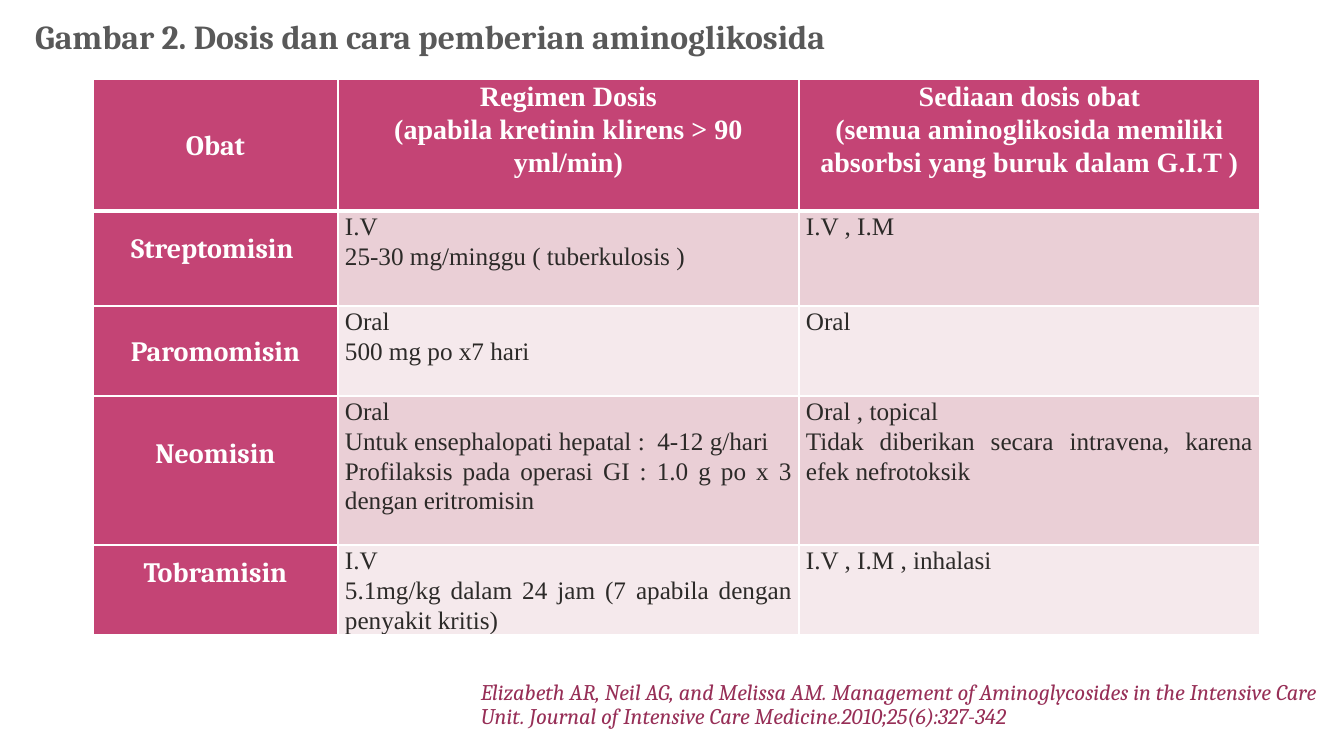
from lxml import etree
from pptx import Presentation
from pptx.dml.color import RGBColor
from pptx.enum.text import MSO_ANCHOR as ANCHOR, MSO_AUTO_SIZE as AUTO_SIZE, PP_ALIGN as ALIGN
from pptx.oxml.ns import qn
from pptx.util import Emu, Pt

SCALE = 914400 / 100.8
WHITE = RGBColor(0xFF, 0xFF, 0xFF)
GREY = RGBColor(0x59, 0x59, 0x59)
INK = RGBColor(0x2C, 0x2A, 0x28)
PINK = RGBColor(0xC4, 0x44, 0x75)
BANDS = [RGBColor(0xF5, 0xE9, 0xEC), RGBColor(0xEA, 0xCF, 0xD6)]
WINE = RGBColor(0x97, 0x2F, 0x57)
SERIF, TIMES = "Cambria", "Times New Roman"


def px(n):
    return Emu(round(n * SCALE))


def write(tf, lines, size, color, font=SERIF, bold=False, italic=False,
          align=ALIGN.LEFT, spacing=0.9, anchor=ANCHOR.TOP):
    tf.word_wrap = True
    tf.vertical_anchor = anchor
    for i, line in enumerate(lines):
        p = tf.paragraphs[0] if i == 0 else tf.add_paragraph()
        p.alignment = align
        p.line_spacing = spacing
        r = p.add_run()
        r.text = line
        r.font.name, r.font.size = font, Pt(size)
        r.font.bold, r.font.italic = bold, italic
        r.font.color.rgb = color


prs = Presentation()
prs.slide_width, prs.slide_height = px(1344), px(756)
s = prs.slides.add_slide(prs.slide_layouts[5])

title = s.shapes.title
title.left, title.top, title.width, title.height = px(25), px(15), px(958), px(48)
title.text_frame.auto_size = AUTO_SIZE.NONE
write(title.text_frame, ["Gambar 2. Dosis dan cara pemberian aminoglikosida"],
      24, GREY, bold=True, anchor=ANCHOR.MIDDLE)

rows = [
    [["Obat"],
     ["Regimen Dosis", "(apabila kretinin klirens > 90 yml/min)"],
     ["Sediaan dosis obat",
      "(semua aminoglikosida memiliki absorbsi yang buruk dalam G.I.T )"]],
    [["Streptomisin "],
     ["I.V", "25-30 mg/minggu ( tuberkulosis )"],
     ["I.V , I.M"]],
    [["Paromomisin"],
     ["Oral", "500 mg po x7 hari"],
     ["Oral"]],
    [["Neomisin"],
     ["Oral", "Untuk ensephalopati hepatal :  4-12 g/hari",
      "Profilaksis pada operasi GI : 1.0 g po x 3 dengan eritromisin"],
     ["Oral , topical",
      "Tidak diberikan secara intravena, karena efek nefrotoksik"]],
    [["Tobramisin"],
     ["I.V", "5.1mg/kg dalam 24 jam (7 apabila dengan penyakit kritis)"],
     ["I.V , I.M , inhalasi"]],
]
col_widths = [245, 461, 461]
row_heights = [132, 95, 90, 149, 89]
label_lifts = [0, 21, 0, 34, 34]  # bottom margin that raises each drug name

table = s.shapes.add_table(len(rows), len(col_widths), px(93), px(79),
                           px(sum(col_widths)), px(sum(row_heights))).table
table.horz_banding = False
for col, width in zip(table.columns, col_widths):
    col.width = px(width)
for i, (row, height) in enumerate(zip(rows, row_heights)):
    table.rows[i].height = px(height)
    for j, lines in enumerate(row):
        cell = table.cell(i, j)
        label, strong = j == 0, i == 0 or j == 0
        cell.margin_left = cell.margin_right = px(7)
        cell.margin_top = 0
        cell.margin_bottom = px(label_lifts[i] if label else 0)
        cell.vertical_anchor = ANCHOR.MIDDLE if label else ANCHOR.TOP

        tc_pr = cell._tc.get_or_add_tcPr()
        for side in ("lnL", "lnR", "lnT", "lnB"):
            thick = (i, side) in ((0, "lnB"), (1, "lnT"))
            ln = etree.SubElement(tc_pr, qn("a:" + side), w=str(Pt(3 if thick else 1)))
            fill = etree.SubElement(ln, qn("a:solidFill"))
            etree.SubElement(fill, qn("a:srgbClr"), val=str(WHITE))
        cell.fill.solid()
        cell.fill.fore_color.rgb = PINK if strong else BANDS[i % 2]

        write(cell.text_frame, lines, 20 if strong else 18, WHITE if strong else INK,
              font=SERIF if label else TIMES, bold=strong, spacing=1.07,
              align=ALIGN.CENTER if strong else ALIGN.JUSTIFY,
              anchor=cell.vertical_anchor)

citation = s.shapes.add_textbox(px(471), px(669), px(873), px(65))
write(citation.text_frame,
      ["Elizabeth AR, Neil AG, and Melissa AM. Management of Aminoglycosides in the "
       "Intensive Care Unit. Journal of Intensive Care Medicine.2010;25(6):327-342"],
      16, WINE, italic=True, anchor=ANCHOR.BOTTOM)

prs.save("out.pptx")
